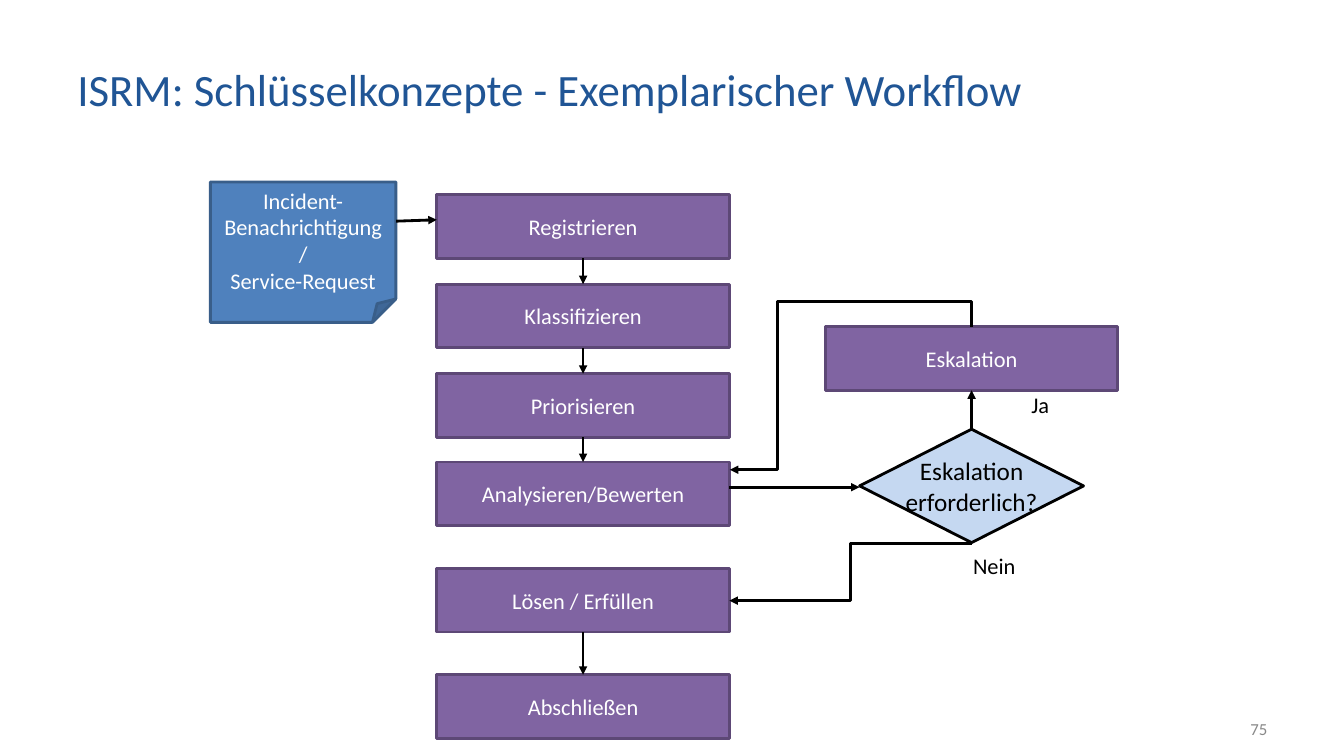
"""Build the slide showing an exemplary ISRM workflow."""
from lxml import etree
from pptx import Presentation
from pptx.dml.color import RGBColor
from pptx.enum.shapes import MSO_CONNECTOR, MSO_SHAPE
from pptx.enum.text import MSO_ANCHOR, PP_ALIGN
from pptx.oxml.ns import qn
from pptx.util import Pt

STRAIGHT, ELBOW = MSO_CONNECTOR.STRAIGHT, MSO_CONNECTOR.ELBOW
RECTANGLE, DIAMOND, NOTE = MSO_SHAPE.RECTANGLE, MSO_SHAPE.DIAMOND, MSO_SHAPE.FOLDED_CORNER
LEFT, CENTER, RIGHT = PP_ALIGN.LEFT, PP_ALIGN.CENTER, PP_ALIGN.RIGHT
TOP, MIDDLE = MSO_ANCHOR.TOP, MSO_ANCHOR.MIDDLE

WHITE = RGBColor(0xFF, 0xFF, 0xFF)
BLACK = RGBColor(0x00, 0x00, 0x00)
GRAY = RGBColor(0x88, 0x88, 0x88)
TITLE_BLUE = RGBColor(0x20, 0x55, 0x95)
PURPLE = RGBColor(0x80, 0x64, 0xA2)
DARK_PURPLE = RGBColor(0x5D, 0x48, 0x76)
NOTE_BLUE = RGBColor(0x4F, 0x81, 0xBD)
DARK_BLUE = RGBColor(0x39, 0x5E, 0x89)
LIGHT_BLUE = RGBColor(0xC5, 0xD8, 0xF1)

STEP_LEFT, STEP_WIDTH, STEP_HEIGHT = 312, 209, 45.5
STEP_RIGHT = STEP_LEFT + STEP_WIDTH
DECISION_X = 694
SITE_TOP, SITE_BOTTOM = 0, 2


def write_text(shape, text, size=16, color=WHITE, align=CENTER, anchor=MIDDLE,
               inset=(0, 0), wrap=True):
    frame = shape.text_frame
    frame.text = text
    frame.word_wrap = wrap
    frame.vertical_anchor = anchor
    frame.margin_left = frame.margin_right = Pt(inset[0])
    frame.margin_top = frame.margin_bottom = Pt(inset[1])
    for paragraph in frame.paragraphs:
        paragraph.alignment = align
        paragraph.font.name = "Calibri"
        paragraph.font.size = Pt(size)
        paragraph.font.color.rgb = color


def add_arrow(kind, start, end):
    arrow = slide.shapes.add_connector(kind, *map(Pt, start + end))
    arrow.line.color.rgb = BLACK
    arrow.line.width = Pt(2)
    etree.SubElement(arrow.line._get_or_add_ln(), qn("a:tailEnd"), type="triangle")
    etree.SubElement(arrow._element.spPr, qn("a:effectLst"))
    return arrow


presentation = Presentation()
presentation.slide_width, presentation.slide_height = Pt(960), Pt(540)
slide = presentation.slides.add_slide(presentation.slide_layouts[5])

title = slide.shapes.title
title.left, title.top, title.width, title.height = Pt(48), Pt(21.6), Pt(713.5), Pt(82.8)
write_text(title, "ISRM: Schlüsselkonzepte - Exemplarischer Workflow",
           size=32, color=TITLE_BLUE, align=LEFT, inset=(7.2, 3.6))

step_style = (PURPLE, DARK_PURPLE, {})
steps = [("Registrieren", 139), ("Klassifizieren", 203), ("Priorisieren", 267),
         ("Analysieren/Bewerten", 330), ("Lösen / Erfüllen", 406), ("Abschließen", 482)]
boxes = [(name, RECTANGLE, (STEP_LEFT, top, STEP_WIDTH, STEP_HEIGHT), *step_style)
         for name, top in steps]
boxes += [
    ("Eskalation", RECTANGLE,
     (DECISION_X - STEP_WIDTH / 2, 233.3, STEP_WIDTH, STEP_HEIGHT), *step_style),
    ("Eskalation\nerforderlich?", DIAMOND, (DECISION_X - 80, 306.6, 160, 81),
     LIGHT_BLUE, BLACK, {"size": 18, "color": BLACK, "wrap": False}),
    ("Incident-Benachrichtigung /\vService-Request", NOTE, (150.3, 130, 132.5, 100.3),
     NOTE_BLUE, DARK_BLUE, {"inset": (7.2, 3.6)}),
]
shapes = {}
for text, kind, bounds, fill, outline, text_format in boxes:
    shape = slide.shapes.add_shape(kind, *map(Pt, bounds))
    shape.shadow.inherit = False
    shape.fill.solid()
    shape.fill.fore_color.rgb = fill
    shape.line.color.rgb = outline
    shape.line.width = Pt(2)
    write_text(shape, text, **text_format)
    shapes[text] = shape

links = [("Registrieren", SITE_BOTTOM, "Klassifizieren", SITE_TOP),
         ("Klassifizieren", SITE_BOTTOM, "Priorisieren", SITE_TOP),
         ("Priorisieren", SITE_BOTTOM, "Analysieren/Bewerten", SITE_TOP),
         ("Lösen / Erfüllen", SITE_BOTTOM, "Abschließen", SITE_TOP),
         ("Eskalation\nerforderlich?", SITE_TOP, "Eskalation", SITE_BOTTOM)]
for source, source_site, target, target_site in links:
    arrow = add_arrow(STRAIGHT, (0, 0), (0, 0))
    arrow.begin_connect(shapes[source], source_site)
    arrow.end_connect(shapes[target], target_site)

add_arrow(STRAIGHT, (283, 158), (STEP_LEFT, 157))
add_arrow(STRAIGHT, (STEP_RIGHT, 348), (DECISION_X - 80, 348))
add_arrow(ELBOW, (DECISION_X, 388.5), (STEP_RIGHT, 429))

escalation_return = add_arrow(ELBOW, (658.9, 370.8), (556.6, 198))
properties = escalation_return._element.spPr
properties.find(qn("a:xfrm")).set("rot", "16200000")
geometry = properties.find(qn("a:prstGeom"))
geometry.set("prst", "bentConnector4")
for guide in list(geometry):
    geometry.remove(guide)
adjustments = etree.SubElement(geometry, qn("a:avLst"))
for name, value in (("adj1", -17600), ("adj2", 80200)):
    etree.SubElement(adjustments, qn("a:gd"), name=name, fmla=f"val {value}")

labels = [
    ("Nein", (656.6, 394.6, 107.3, 19.4), {"color": BLACK, "anchor": TOP}),
    ("Ja", (698.4, 279.4, 89.3, 19.4), {"color": BLACK, "anchor": TOP}),
    ("75", (688.3, 506.2, 224, 28.8),
     {"size": 12, "color": GRAY, "align": RIGHT, "inset": (7.2, 3.6)}),
]
for text, bounds, text_format in labels:
    write_text(slide.shapes.add_textbox(*map(Pt, bounds)), text, **text_format)

presentation.save("out.pptx")
